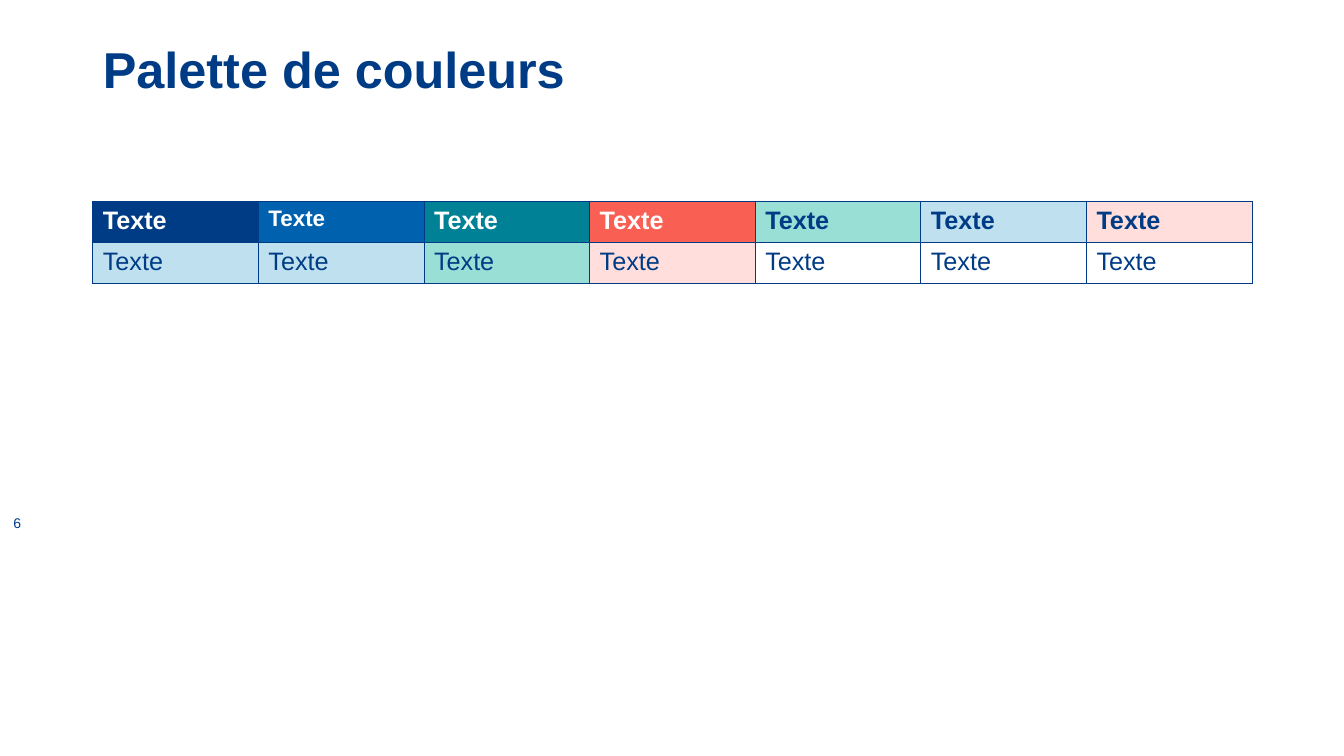
from lxml import etree
from pptx import Presentation
from pptx.dml.color import RGBColor
from pptx.enum.text import MSO_ANCHOR, PP_ALIGN
from pptx.oxml.ns import qn
from pptx.util import Pt

PX = 9144  # EMU per px, 100 px to the inch
TOP, MIDDLE = MSO_ANCHOR.TOP, MSO_ANCHOR.MIDDLE
LEFT, CENTER = PP_ALIGN.LEFT, PP_ALIGN.CENTER
TITLE_ONLY = 5

NAVY = RGBColor(0x00, 0x3C, 0x85)
BLUE = RGBColor(0x00, 0x61, 0xAE)
TEAL = RGBColor(0x00, 0x81, 0x96)
CORAL = RGBColor(0xF9, 0x5F, 0x53)
MINT = RGBColor(0x9A, 0xDF, 0xD6)
SKY = RGBColor(0xBF, 0xE0, 0xEF)
ROSE = RGBColor(0xFF, 0xDE, 0xDC)
WHITE = RGBColor(0xFF, 0xFF, 0xFF)

# header fill, header text colour, header size, body fill
PALETTE = [
    (NAVY, WHITE, 18, SKY),
    (BLUE, WHITE, 16, SKY),
    (TEAL, WHITE, 18, MINT),
    (CORAL, WHITE, 18, ROSE),
    (MINT, NAVY, 18, WHITE),
    (SKY, NAVY, 18, WHITE),
    (ROSE, NAVY, 18, WHITE),
]


def emu(*lengths):
    return [n * PX for n in lengths]


def write(tf, text, size, color=NAVY, bold=False, align=LEFT):
    p = tf.paragraphs[0]
    p.alignment = align
    r = p.add_run()
    r.text = text
    font = {"name": "Arial", "size": Pt(size), "bold": bold}
    for name, value in font.items():
        setattr(r.font, name, value)
    r.font.color.rgb = color
    return p


def add_title(slide, box, text):
    sp = slide.shapes.title
    sp.left, sp.top, sp.width, sp.height = emu(*box)
    tf = sp.text_frame
    tf.word_wrap = True
    tf.vertical_anchor = TOP
    write(tf, text, 36, bold=True).line_spacing = 0.9


def add_borders(cell, color, width):
    tc_pr = cell._tc.get_or_add_tcPr()
    for side in ("a:lnL", "a:lnR", "a:lnT", "a:lnB"):
        ln = etree.SubElement(tc_pr, qn(side), w=str(Pt(width)))
        fill = etree.SubElement(ln, qn("a:solidFill"))
        etree.SubElement(fill, qn("a:srgbClr"), val=str(color))


def fill_cell(cell, fill, **text_format):
    add_borders(cell, NAVY, 0.5)
    cell.fill.solid()
    cell.fill.fore_color.rgb = fill
    write(cell.text_frame, "Texte", **text_format)


def add_palette(slide, box):
    left, top, width, height = emu(*box)
    table = slide.shapes.add_table(2, len(PALETTE), left, top, width, height).table
    for i, (head_fill, head_color, head_size, body_fill) in enumerate(PALETTE):
        fill_cell(table.cell(0, i), head_fill, size=head_size, color=head_color, bold=True)
        fill_cell(table.cell(1, i), body_fill, size=18)


def add_page_number(slide, box, number):
    tf = slide.shapes.add_textbox(*emu(*box)).text_frame
    tf.word_wrap = True
    tf.vertical_anchor = MIDDLE
    write(tf, number, 10, align=CENTER)


def main():
    prs = Presentation()
    prs.slide_width, prs.slide_height = emu(1333, 750)
    slide = prs.slides.add_slide(prs.slide_layouts[TITLE_ONLY])
    add_title(slide, (92, 40, 1150, 145), "Palette de couleurs")
    add_palette(slide, (92, 200, 1150, 81))
    add_page_number(slide, (0, 499, 34, 40), "6")
    prs.save("out.pptx")


if __name__ == "__main__":
    main()
